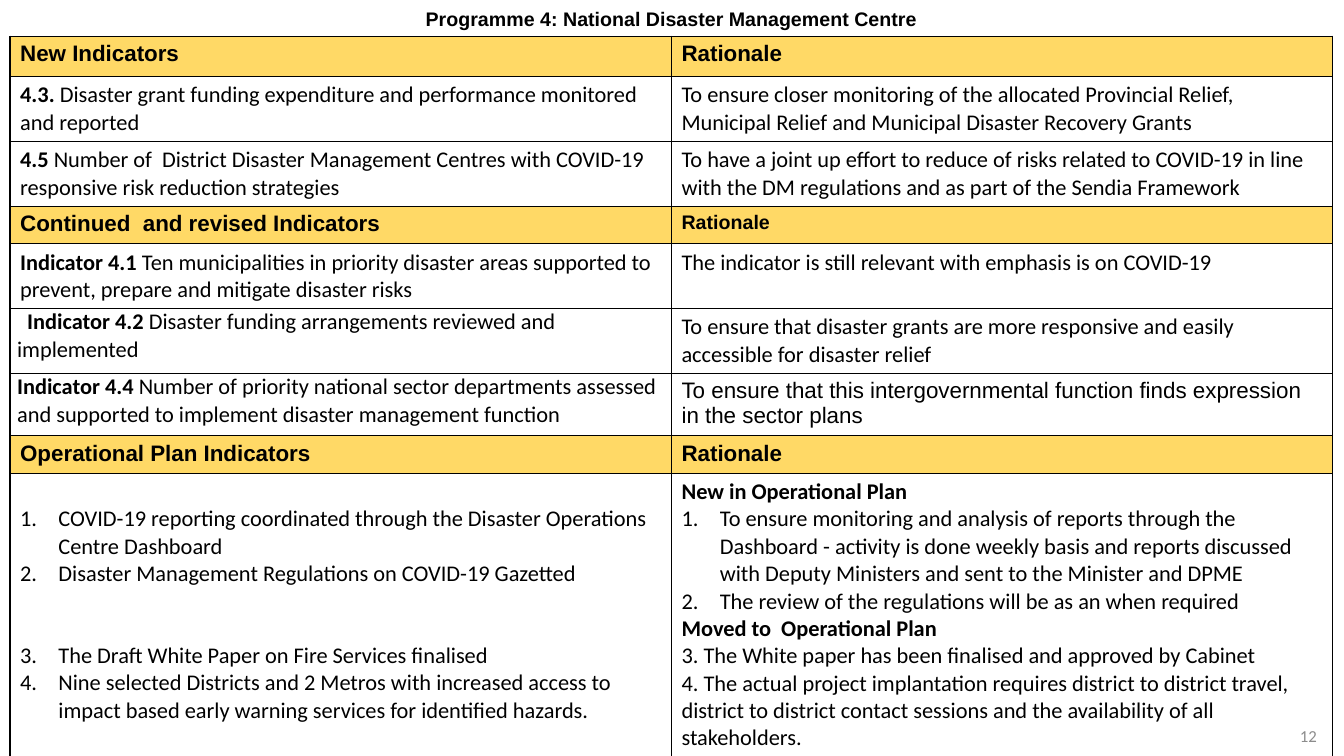
from dataclasses import dataclass

from lxml.etree import SubElement
from pptx import Presentation
from pptx.dml.color import RGBColor
from pptx.enum.text import MSO_ANCHOR, PP_ALIGN
from pptx.oxml import parse_xml
from pptx.oxml.ns import nsdecls, qn
from pptx.util import Emu, Pt

PX = 9144  # 100 px to the inch
BLACK, GOLD, GREY = "000000", "FFD966", "8C8C8C"
ROW_HEIGHTS = [40, 62, 62, 37, 62, 62, 62, 37, 260]
COLUMN_WIDTH = 656
LIST_INDENT = 38


@dataclass
class Line:
    """One paragraph: a bold lead followed by plain text."""
    bold: str = ""
    plain: str = ""
    font: str = "Calibri"
    size: int = 16
    numbered: bool = False
    before: int = 0
    first_indent: int = 0


@dataclass
class Entry:
    """One table cell."""
    lines: list
    fill: str = ""
    margins: tuple = (10, 5)  # side, top


def px(value):
    return Emu(value * PX)


def color(value):
    return RGBColor.from_string(value)


def heading(text, size=16):
    return Entry([Line(bold=text, font="Arial", size=size)], GOLD)


def entry(bold="", plain="", margins=(10, 5), **options):
    return Entry([Line(bold, plain, **options)], margins=margins)


def item(text, before=0):
    return Line(plain=text, numbered=True, before=before)


ROWS = [
    (heading("New Indicators"), heading("Rationale")),
    (entry("4.3.", " Disaster grant funding expenditure and performance monitored and reported"),
     entry(plain="To ensure closer monitoring of the allocated Provincial Relief, "
                 "Municipal Relief and Municipal Disaster Recovery Grants")),
    (entry("4.5", " Number of  District Disaster Management Centres with COVID-19 "
                  "responsive risk reduction strategies"),
     entry(plain="To have a joint up effort to reduce of risks related to COVID-19 in line "
                 "with the DM regulations and as part of the Sendia Framework")),
    (heading("Continued  and revised Indicators"), heading("Rationale", 14)),
    (entry("Indicator 4.1 ", "Ten municipalities in priority disaster areas supported to "
                             "prevent, prepare and mitigate disaster risks"),
     entry(plain="The indicator is still relevant with emphasis is on COVID-19")),
    (entry("Indicator 4.2 ", "Disaster funding arrangements reviewed and implemented",
           margins=(7, 0), first_indent=10),
     entry(plain="To ensure that disaster grants are more responsive and easily "
                 "accessible for disaster relief")),
    (entry("Indicator 4.4", " Number of priority national sector departments assessed "
                            "and supported to implement disaster management function",
           margins=(7, 0)),
     entry(plain="To ensure that this intergovernmental function finds expression "
                 "in the sector plans", font="Arial")),
    (heading("Operational Plan Indicators"), heading("Rationale")),
    (Entry([
        item("COVID-19 reporting coordinated through the Disaster Operations Centre Dashboard"),
        item("Disaster Management Regulations on COVID-19 Gazetted"),
        item("The Draft White Paper on Fire Services finalised", before=39),
        item("Nine selected Districts and 2 Metros with increased access to impact based "
             "early warning services for identified hazards."),
    ], margins=(10, 32)),
     Entry([
         Line(bold="New in Operational Plan"),
         item("To ensure monitoring and analysis of reports through the Dashboard - activity "
              "is done weekly basis and reports discussed with Deputy Ministers and sent to "
              "the Minister and DPME"),
         item("The review of the regulations will be as an when required"),
         Line(bold="Moved to  Operational Plan"),
         Line(plain="3. The White paper has been finalised and approved by Cabinet"),
         Line(plain="4. The actual project implantation requires district to district travel, "
                    "district to district contact sessions and the availability of all "
                    "stakeholders."),
     ])),
]


def format_run(run, font, size, bold, ink=BLACK):
    run.font.name = font
    run.font.size = Pt(size)
    run.font.bold = bold
    run.font.color.rgb = color(ink)


def write_line(paragraph, line):
    for text, bold in ((line.bold, True), (line.plain, False)):
        if text:
            run = paragraph.add_run()
            run.text = text
            format_run(run, line.font, line.size, bold)
    if line.before:
        paragraph.space_before = Pt(line.before)
    properties = paragraph._p.get_or_add_pPr()
    if line.numbered:
        properties.set("marL", str(px(LIST_INDENT)))
        properties.set("indent", str(-px(LIST_INDENT)))
        SubElement(properties, qn("a:buAutoNum"), type="arabicPeriod")
    elif line.first_indent:
        properties.set("indent", str(px(line.first_indent)))


def add_borders(cell):
    properties = cell._tc.get_or_add_tcPr()
    for position, side in enumerate(("lnL", "lnR", "lnT", "lnB")):
        properties.insert(position, parse_xml(
            f'<a:{side} {nsdecls("a")} w="{Pt(1)}"><a:solidFill>'
            f'<a:srgbClr val="{BLACK}"/></a:solidFill></a:{side}>'))


def fill_cell(cell, content):
    side, top = content.margins
    cell.margin_left = cell.margin_right = px(side)
    cell.margin_top = px(top)
    cell.margin_bottom = px(min(top, 5))
    if content.fill:
        cell.fill.solid()
        cell.fill.fore_color.rgb = color(content.fill)
    else:
        cell.fill.background()
    add_borders(cell)
    for index, line in enumerate(content.lines):
        text_frame = cell.text_frame
        write_line(text_frame.add_paragraph() if index else text_frame.paragraphs[0], line)


def add_indicator_table(slide):
    table = slide.shapes.add_table(len(ROWS), 2, px(10), px(36), px(2 * COLUMN_WIDTH),
                                   px(sum(ROW_HEIGHTS))).table
    table.first_row = table.horz_banding = False
    for column in table.columns:
        column.width = px(COLUMN_WIDTH)
    for row, height, contents in zip(table.rows, ROW_HEIGHTS, ROWS):
        row.height = px(height)
        for cell, content in zip(row.cells, contents):
            fill_cell(cell, content)


def write_label(shape, text, alignment, font, size, bold, ink):
    text_frame = shape.text_frame
    text_frame.text = text
    text_frame.word_wrap = True
    text_frame.vertical_anchor = MSO_ANCHOR.MIDDLE
    paragraph = text_frame.paragraphs[0]
    paragraph.alignment = alignment
    format_run(paragraph.runs[0], font, size, bold, ink)
    return paragraph


def main():
    presentation = Presentation()
    presentation.slide_width, presentation.slide_height = px(1333), px(750)
    slide = presentation.slides.add_slide(presentation.slide_layouts[5])

    # Title
    title = slide.shapes.title
    title.left, title.top, title.width, title.height = px(235), px(0), px(862), px(40)
    paragraph = write_label(title, "Programme 4: National Disaster Management Centre",
                            PP_ALIGN.CENTER, "Arial", 14, True, BLACK)
    paragraph.line_spacing = 0.9

    # Indicators and their rationale
    add_indicator_table(slide)

    # Page number
    page_number = slide.shapes.add_textbox(px(1016), px(710), px(300), px(40))
    write_label(page_number, "12", PP_ALIGN.RIGHT, "Calibri", 12, False, GREY)

    presentation.save("out.pptx")


if __name__ == "__main__":
    main()
